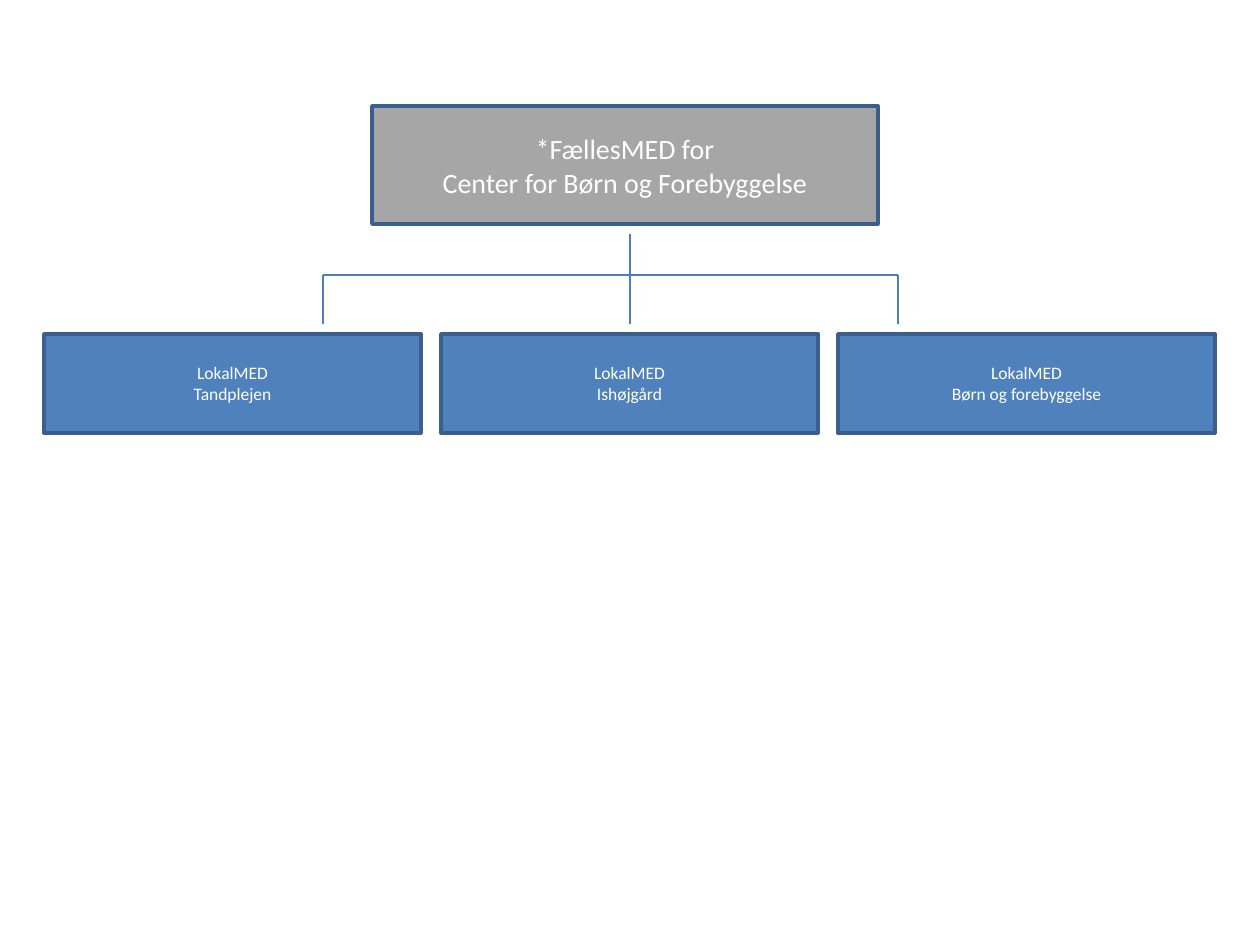
"""Build the organisation chart of the MED committees."""
from dataclasses import dataclass

import pptx
import pptx.dml.color
import pptx.enum.shapes
import pptx.enum.text
import pptx.oxml
import pptx.oxml.ns
import pptx.util

PX = 914400 / 126
COLOURS = {"center": "A6A6A6", "local": "4F81BD", "border": "3A5F8C",
           "branch": "4B7EBC", "text": "FFFFFF"}
LOCAL_LEFT, LOCAL_STEP, LOCAL_TOP = 44, 397, 334
STEM_X, STEM_TOP, BRANCH_Y, BRANCH_BOTTOM = 630, 234, 275, 324
BRANCH_LEFT, BRANCH_RIGHT = 323, 898


@dataclass(frozen=True)
class Committee:
    lines: tuple[str, ...]
    left: int
    top: int
    width: int
    height: int
    colour: str
    size: int


@dataclass(frozen=True)
class Branch:
    x1: int
    y1: int
    x2: int
    y2: int


def px(length: int) -> int:
    """Turn pixels into EMU."""
    return pptx.util.Emu(round(length * PX))


def rgb(key: str) -> pptx.dml.color.RGBColor:
    """Look up a named colour."""
    return pptx.dml.color.RGBColor.from_string(COLOURS[key])


def apply_format(target: object, values: dict[str, object]) -> None:
    """Set each format value on the target."""
    for attribute, value in values.items():
        setattr(target, attribute, value)


def draw_committee(slide: pptx.slide.Slide, committee: Committee) -> None:
    """Draw one committee box with its centred lines."""
    box = slide.shapes.add_shape(
        pptx.enum.shapes.MSO_SHAPE.RECTANGLE, px(committee.left), px(committee.top),
        px(committee.width), px(committee.height))
    box.shadow.inherit = False
    box.fill.solid()
    box.fill.fore_color.rgb = rgb(committee.colour)
    box.line.color.rgb = rgb("border")
    box.line.width = pptx.util.Pt(2)
    frame = box.text_frame
    apply_format(frame, {"word_wrap": True,
                         "vertical_anchor": pptx.enum.text.MSO_ANCHOR.MIDDLE})
    for index, line in enumerate(committee.lines):
        paragraph = frame.add_paragraph() if index else frame.paragraphs[0]
        paragraph.alignment = pptx.enum.text.PP_ALIGN.CENTER
        run = paragraph.add_run()
        run.text = line
        apply_format(run.font, {"name": "Calibri", "size": pptx.util.Pt(committee.size)})
        run.font.color.rgb = rgb("text")


def draw_branch(slide: pptx.slide.Slide, branch: Branch) -> None:
    """Draw one straight branch of the chart."""
    connector = slide.shapes.add_connector(
        pptx.enum.shapes.MSO_CONNECTOR.STRAIGHT,
        px(branch.x1), px(branch.y1), px(branch.x2), px(branch.y2))
    connector.line.color.rgb = rgb("branch")
    connector.line.width = pptx.util.Pt(0.75)
    connector._element.spPr.append(
        pptx.oxml.parse_xml(f"<a:effectLst {pptx.oxml.ns.nsdecls('a')}/>"))


def main() -> None:
    """Build and save the slide."""
    presentation = pptx.Presentation()
    apply_format(presentation, {"slide_width": px(1260), "slide_height": px(945)})
    slide = presentation.slides.add_slide(presentation.slide_layouts[6])

    center = Committee(("*FællesMED for", "Center for Børn og Forebyggelse"),
                       372, 106, 506, 118, "center", 16)
    units = ("Tandplejen", "Ishøjgård", "Børn og forebyggelse")
    local_committees = [
        Committee(("LokalMED", unit), LOCAL_LEFT + index * LOCAL_STEP, LOCAL_TOP,
                  377, 99, "local", 10)
        for index, unit in enumerate(units)]
    for committee in (center, *local_committees):
        draw_committee(slide, committee)

    stem = Branch(STEM_X, STEM_TOP, STEM_X, BRANCH_Y)
    crossbar = Branch(BRANCH_LEFT, BRANCH_Y, BRANCH_RIGHT, BRANCH_Y)
    drops = [Branch(x, BRANCH_Y, x, BRANCH_BOTTOM)
             for x in (BRANCH_LEFT, STEM_X, BRANCH_RIGHT)]
    for branch in (stem, crossbar, *drops):
        draw_branch(slide, branch)

    presentation.save("out.pptx")


if __name__ == "__main__":
    main()
